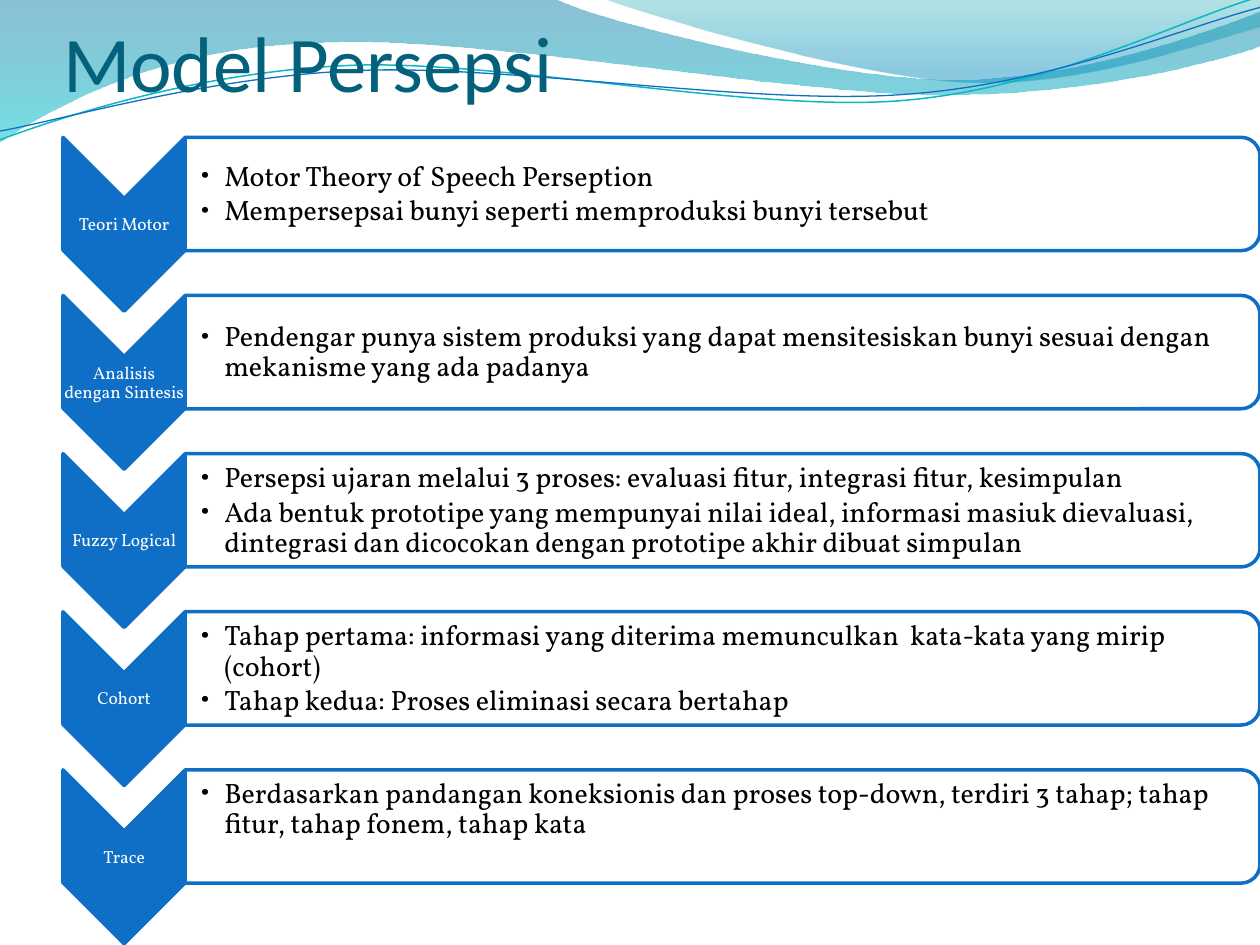
from dataclasses import dataclass
from math import cos, radians, sin
from typing import Any

from lxml import etree
from pptx import Presentation
from pptx.dml.color import RGBColor
from pptx.enum.shapes import MSO_SHAPE as Preset
from pptx.enum.text import MSO_ANCHOR as Anchor, PP_ALIGN as Align
from pptx.oxml import parse_xml
from pptx.oxml.ns import nsdecls, qn
from pptx.util import Inches, Pt

COLORS = {
    "blue": "0F6FC6", "teal": "0AB8BF", "title": "04617B",
    "white": "FFFFFF", "black": "000000",
    "deep": "0074A1", "cyan": "00C6CF", "sea": "00A1A9", "sky": "008BBF",
}
TITLE_FONT = {"name": "Calibri", "size": Pt(45), "color": "title"}
LABEL_FONT = {"name": "Vollkorn", "size": Pt(10), "color": "white"}
BULLET_FONT = {"name": "Vollkorn", "size": Pt(16), "color": "black"}
UNITS = 1000  # outline units to the inch

# Each wave: start point, then Bezier curves (6 numbers) and lines (2 numbers)
WAVE_BANDS = [
    ([(0, 0), (4.4, -0.01), (4.76, 0.17, 6.64, 0.63, 7.58, 0.63),
      (8.53, 0.63, 9.58, 0.26, 10, 0.09), (10.01, 0.36),
      (9.83, 0.44, 8.7, 0.76, 7.46, 0.75), (6.22, 0.75, 3.82, 0.28, 2.57, 0.34),
      (1.29, 0.36, 0.46, 0.83, -0.01, 1.13)],
     [(0, "deep", 45), (100, "cyan", 55)]),
    ([(4.79, -0.01), (5.09, 0.11, 6.82, 0.62, 7.69, 0.65),
      (8.56, 0.69, 9.61, 0.32, 10, 0.21), (10, 0)],
     [(0, "sea", 30), (80, "sky", 45)]),
]
# Outline, centre, colour, width in points
WAVE_LINES = [
    ([(0, 1.11), (0.48, 0.93, 1.58, 0.57, 2.77, 0.52),
      (3.95, 0.47, 5.93, 0.89, 7.13, 0.8), (8.33, 0.71, 9.38, 0.15, 9.98, -0.02)],
     (4.99, 0.58), "teal", 0.85),
    ([(0, 1.04), (0.47, 0.96, 1.64, 0.61, 2.83, 0.56),
      (4.03, 0.51, 5.97, 0.84, 7.17, 0.75), (8.36, 0.67, 9.41, 0.21, 10, 0.06)],
     (5, 0.59), "blue", 0.75),
]
WAVE_TILT = -2.7

# Label, bullet points, bottom inset of the text
MODELS = [
    ("Teori Motor", ["Motor Theory of Speech Perseption",
                     "Mempersepsai bunyi seperti memproduksi bunyi tersebut"], 0.01),
    ("Analisis dengan Sintesis",
     ["Pendengar punya sistem produksi yang dapat mensitesiskan bunyi sesuai "
      "dengan mekanisme yang ada padanya"], 0.01),
    ("Fuzzy Logical",
     ["Persepsi ujaran melalui 3 proses: evaluasi fitur, integrasi fitur, kesimpulan",
      "Ada bentuk prototipe yang mempunyai nilai ideal, informasi masiuk dievaluasi, "
      "dintegrasi dan dicocokan dengan prototipe akhir dibuat simpulan"], 0.01),
    ("Cohort",
     ["Tahap pertama: informasi yang diterima memunculkan  kata-kata yang mirip (cohort)",
      "Tahap kedua: Proses eliminasi secara bertahap"], 0.01),
    ("Trace",
     ["Berdasarkan pandangan koneksionis dan proses top-down, terdiri 3 tahap; "
      "tahap fitur, tahap fonem, tahap kata"], 0.29),
]


def rgb(name):
    return RGBColor.from_string(COLORS[name])


def turn(point, centre, degrees):
    angle = radians(degrees)
    x, y = point[0] - centre[0], point[1] - centre[1]
    return (centre[0] + x * cos(angle) - y * sin(angle),
            centre[1] + x * sin(angle) + y * cos(angle))


@dataclass
class SlideBuilder:
    slide: Any
    accent: str = "blue"
    line_width: float = 2

    def format_text(self, paragraph, text, style):
        run = paragraph.add_run()
        run.text = text
        for key, value in style.items():
            if key == "color":
                run.font.color.rgb = rgb(value)
            else:
                setattr(run.font, key, value)

    def set_frame(self, frame, anchor, insets):
        sides = ("margin_left", "margin_top", "margin_right", "margin_bottom")
        values = dict(zip(sides, map(Inches, insets)))
        values |= {"word_wrap": True, "vertical_anchor": anchor}
        for key, value in values.items():
            setattr(frame, key, value)

    def title(self, text, box):
        title = self.slide.shapes.title
        for key, value in zip(("left", "top", "width", "height"), box):
            setattr(title, key, Inches(value))
        self.set_frame(title.text_frame, Anchor.BOTTOM, (0, 0.05, 0, 0))
        paragraph = title.text_frame.paragraphs[0]
        paragraph.alignment = Align.LEFT
        self.format_text(paragraph, text, TITLE_FONT)
        # Bring the title in front of the waves
        self.slide.shapes._spTree.append(title._element)

    def wave(self, segments, closed, centre=(0, 0), tilt=0):
        points = [turn(segment[i:i + 2], centre, -tilt)
                  for segment in segments for i in range(0, len(segment), 2)]
        start, *others = [(round(x * UNITS), round(y * UNITS)) for x, y in points]
        builder = self.slide.shapes.build_freeform(*start, scale=Inches(1) / UNITS)
        builder.add_line_segments(others, close=closed)
        shape = builder.convert_to_shape()
        shape.rotation = tilt
        shape.shadow.inherit = False
        # Join each curve's two controls and end point into one Bezier element
        lines = iter(list(shape._element.iter(qn("a:lnTo"))))
        for segment in segments[1:]:
            parts = [next(lines) for _ in range(len(segment) // 2)]
            if len(parts) == 3:
                curve = etree.Element(qn("a:cubicBezTo"))
                parts[0].addprevious(curve)
                for part in parts:
                    curve.append(part[0])
                    part.getparent().remove(part)
        return shape

    def wave_band(self, segments, stops):
        shape = self.wave(segments, True)
        shape.line.fill.background()
        stop_xml = "".join(
            f'<a:gs pos="{position * 1000}"><a:srgbClr val="{COLORS[color]}">'
            f'<a:alpha val="{opacity * 1000}"/></a:srgbClr></a:gs>'
            for position, color, opacity in stops)
        gradient = parse_xml(f'<a:gradFill {nsdecls("a")} rotWithShape="1"><a:gsLst>{stop_xml}'
                             '</a:gsLst><a:lin ang="5400000" scaled="0"/></a:gradFill>')
        shape._element.spPr.find(qn("a:custGeom")).addnext(gradient)

    def wave_line(self, segments, centre, color, width):
        shape = self.wave(segments, False, centre, WAVE_TILT)
        shape.fill.background()
        shape.line.color.rgb = rgb(color)
        shape.line.width = Pt(width)

    def turned_shape(self, preset, left, top, width, height, fill, opacity=100):
        """Place a shape turned by 90 degrees so that it covers the given box."""
        shift = (width - height) / 2
        shape = self.slide.shapes.add_shape(
            preset, Inches(left + shift), Inches(top - shift), Inches(height), Inches(width))
        shape.rotation = 90
        shape.shadow.inherit = False
        shape.fill.solid()
        shape.fill.fore_color.rgb = rgb(fill)
        shape.line.color.rgb = rgb(self.accent)
        shape.line.width = Pt(self.line_width)
        if opacity < 100:
            color = shape._element.spPr.find(qn("a:solidFill"))[0]
            etree.SubElement(color, qn("a:alpha"), val=str(opacity * 1000))

    def text_box(self, box, texts, style, insets, bullets=False):
        frame = self.slide.shapes.add_textbox(*map(Inches, box)).text_frame
        self.set_frame(frame, Anchor.MIDDLE, insets)
        for index, text in enumerate(texts):
            paragraph = frame.add_paragraph() if index else frame.paragraphs[0]
            paragraph.line_spacing = 0.9
            self.format_text(paragraph, text, style)
            if bullets:
                paragraph.level = 1
                paragraph.space_after = Pt(2.4)
                properties = paragraph._p.get_or_add_pPr()
                properties.set("marL", str(Inches(0.19)))
                properties.set("indent", str(-Inches(0.19)))
                etree.SubElement(properties, qn("a:buFont"), typeface=style["name"])
                etree.SubElement(properties, qn("a:buChar"), char="•")
            else:
                paragraph.alignment = Align.CENTER


def main():
    presentation = Presentation()
    presentation.slide_width, presentation.slide_height = Inches(10), Inches(7.5)
    builder = SlideBuilder(presentation.slides.add_slide(presentation.slide_layouts[5]))

    # Waves behind the title
    for band in WAVE_BANDS:
        builder.wave_band(*band)
    for line in WAVE_LINES:
        builder.wave_line(*line)
    builder.title("Model Persepsi", (0.5, 0, 9, 0.86))

    # One chevron and one panel for each model
    left, first_top, pitch, chevron_width = 0.5, 1.09, 5.02 / 4, 0.97
    panel_left = left + chevron_width
    for row, (label, points, bottom) in enumerate(MODELS):
        top = first_top + row * pitch
        builder.turned_shape(Preset.CHEVRON, left, top, chevron_width, 1.38, "blue")
        builder.text_box((left, top + 0.49, chevron_width, 0.41), [label],
                         LABEL_FONT, (0.01,) * 4)
        builder.turned_shape(Preset.ROUND_2_SAME_RECTANGLE, panel_left, top, 8.53, 0.9,
                             "white", opacity=90)
        builder.text_box((panel_left, top + 0.05, 8.49, 0.81), points, BULLET_FONT,
                         (0.12, 0.01, 0.01, bottom), bullets=True)

    presentation.save("out.pptx")


if __name__ == "__main__":
    main()
